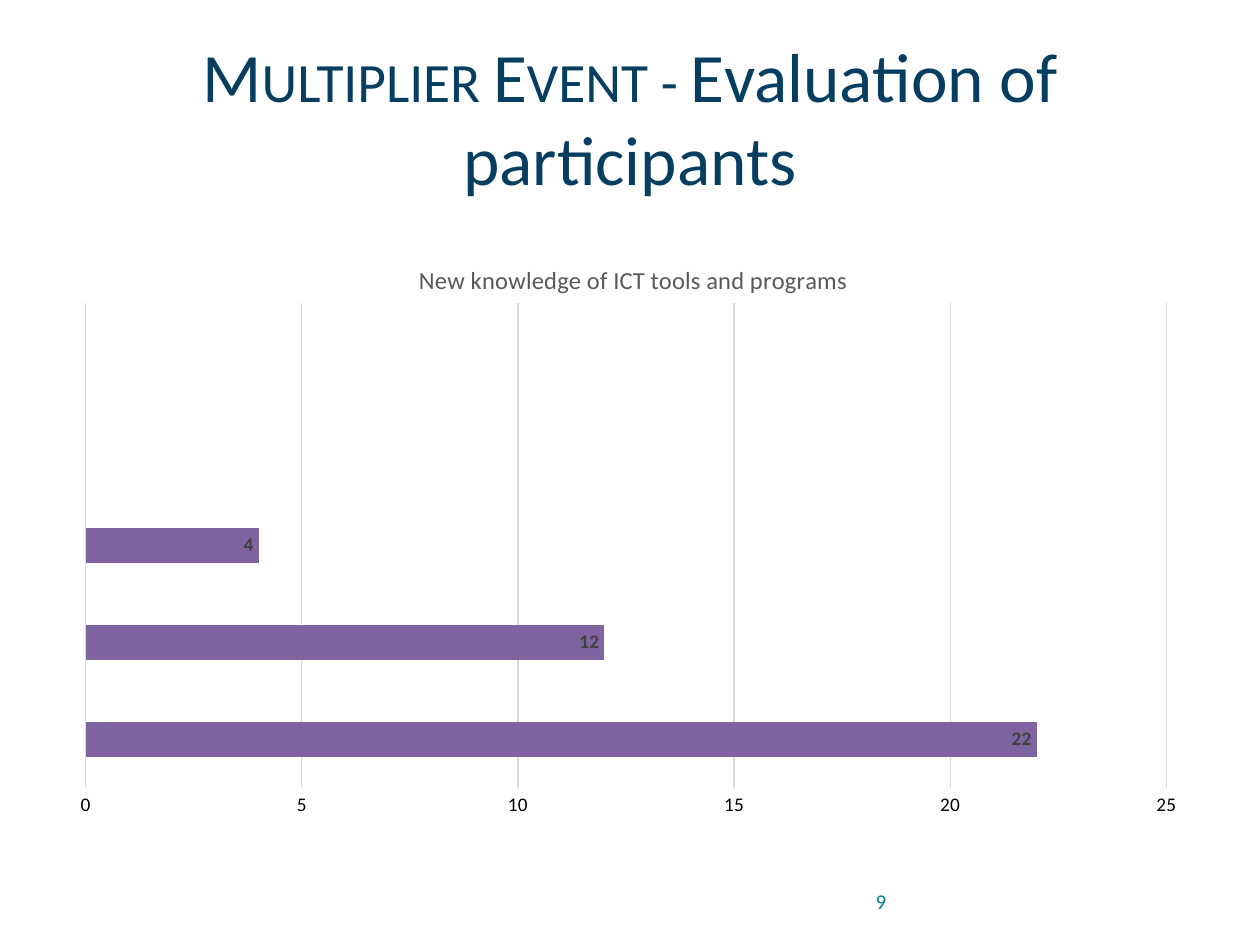
from dataclasses import dataclass

from lxml import etree
from pptx import Presentation
from pptx.chart.data import CategoryChartData
from pptx.dml.color import RGBColor
from pptx.enum.chart import XL_CHART_TYPE, XL_LABEL_POSITION, XL_TICK_MARK
from pptx.enum.text import MSO_ANCHOR, MSO_AUTO_SIZE, PP_ALIGN
from pptx.oxml.ns import qn
from pptx.util import Inches, Pt

BAR = XL_CHART_TYPE.BAR_CLUSTERED
INSIDE_END = XL_LABEL_POSITION.INSIDE_END
NO_TICK = XL_TICK_MARK.NONE
MIDDLE = MSO_ANCHOR.MIDDLE
NO_FIT = MSO_AUTO_SIZE.NONE
CENTER = PP_ALIGN.CENTER
PAGE_WIDTH, PAGE_HEIGHT = Inches(10), Inches(7.5)


@dataclass(frozen=True)
class Theme:
    font: str = "Calibri"
    heading: str = "063E61"
    number: str = "018287"
    bar: str = "8064A2"
    grid: str = "D9D9D9"
    caption: str = "595959"
    label: str = "404040"
    axis: str = "000000"
    heading_size: float = 39.6
    caption_size: float = 14
    number_size: float = 12
    axis_size: float = 11
    chart_size: float = 10


THEME = Theme()


def share_box(left, top, width, height):
    return (int(left * PAGE_WIDTH), int(top * PAGE_HEIGHT),
            int(width * PAGE_WIDTH), int(height * PAGE_HEIGHT))


def style_font(font, size, color, bold=False):
    values = {"name": THEME.font, "size": Pt(size), "bold": bold}
    for name, value in values.items():
        setattr(font, name, value)
    font.color.rgb = RGBColor.from_string(color)


def place(shape, box):
    for name, value in zip(("left", "top", "width", "height"), box):
        setattr(shape, name, value)


def style_frame(frame):
    values = {"word_wrap": True, "auto_size": NO_FIT, "vertical_anchor": MIDDLE}
    for name, value in values.items():
        setattr(frame, name, value)


def add_heading(page, box):
    title = page.shapes.title
    place(title, box)
    style_frame(title.text_frame)
    para = title.text_frame.paragraphs[0]
    para.alignment = CENTER
    for text, caps in (("Multiplier Event - E", "small"),
                       ("valuation of participants", "none")):
        span = para.add_run()
        span.text = text
        style_font(span.font, THEME.heading_size, THEME.heading)
        span.font._element.set("cap", caps)


def set_layout(parent, index, **values):
    for old in parent.findall(qn("c:layout")):
        parent.remove(old)
    layout = etree.Element(qn("c:layout"))
    manual = etree.SubElement(layout, qn("c:manualLayout"))
    for name, value in values.items():
        etree.SubElement(manual, qn(f"c:{name}")).set("val", str(value))
    parent.insert(index, layout)


def style_value_axis(axis):
    values = {"minimum_scale": 0, "maximum_scale": 25, "major_unit": 5,
              "major_tick_mark": NO_TICK, "minor_tick_mark": NO_TICK,
              "has_major_gridlines": True}
    for name, value in values.items():
        setattr(axis, name, value)
    axis.format.line.fill.background()
    grid_line = axis.major_gridlines.format.line
    grid_line.width = Pt(0.75)
    grid_line.color.rgb = RGBColor.from_string(THEME.grid)
    style_font(axis.tick_labels.font, THEME.axis_size, THEME.axis)


def style_bars(plot):
    plot.gap_width = 182
    plot.vary_by_categories = False
    series = plot.series[0]
    series.format.fill.solid()
    series.format.fill.fore_color.rgb = RGBColor.from_string(THEME.bar)
    labels = series.data_labels
    labels.show_value = True
    labels.position = INSIDE_END
    style_font(labels.font, THEME.axis_size, THEME.label, bold=True)


def add_rating_chart(page, box):
    data = CategoryChartData()
    data.categories = ["1", "2", "3", "4", "5"]
    data.add_series("Series 1", (22, 12, 4, None, None))
    chart = page.shapes.add_chart(BAR, *box, data).chart
    style_font(chart.font, THEME.chart_size, THEME.axis)
    chart.has_legend = False
    chart.has_title = True
    caption = chart.chart_title
    para = caption.text_frame.paragraphs[0]
    span = para.add_run()
    span.text = "New knowledge of ICT tools and programs"
    style_font(span.font, THEME.caption_size, THEME.caption)
    caption.include_in_layout = False
    set_layout(caption._element, 1, xMode="edge", yMode="edge", x=0.31, y=0.04)
    chart.category_axis.visible = False
    style_value_axis(chart.value_axis)
    style_bars(chart.plots[0])
    plot_area = chart._chartSpace.find(f".//{qn('c:plotArea')}")
    set_layout(plot_area, 0, layoutTarget="inner", xMode="edge", yMode="edge",
               x=0.02, y=0.115, w=0.953, h=0.812)


def add_page_number(page, box):
    frame = page.shapes.add_textbox(*box).text_frame
    style_frame(frame)
    span = frame.paragraphs[0].add_run()
    span.text = "9"
    style_font(span.font, THEME.number_size, THEME.number)


def main():
    deck = Presentation()
    deck.slide_width, deck.slide_height = PAGE_WIDTH, PAGE_HEIGHT
    page = deck.slides.add_slide(deck.slide_layouts[5])
    add_heading(page, share_box(0.05, 0.04, 0.9, 1 / 6))
    add_rating_chart(page, share_box(0.05, 0.248, 0.9, 0.632))
    add_page_number(page, share_box(0.685, 0.927, 0.265, 0.053))
    deck.save("out.pptx")


if __name__ == "__main__":
    main()
